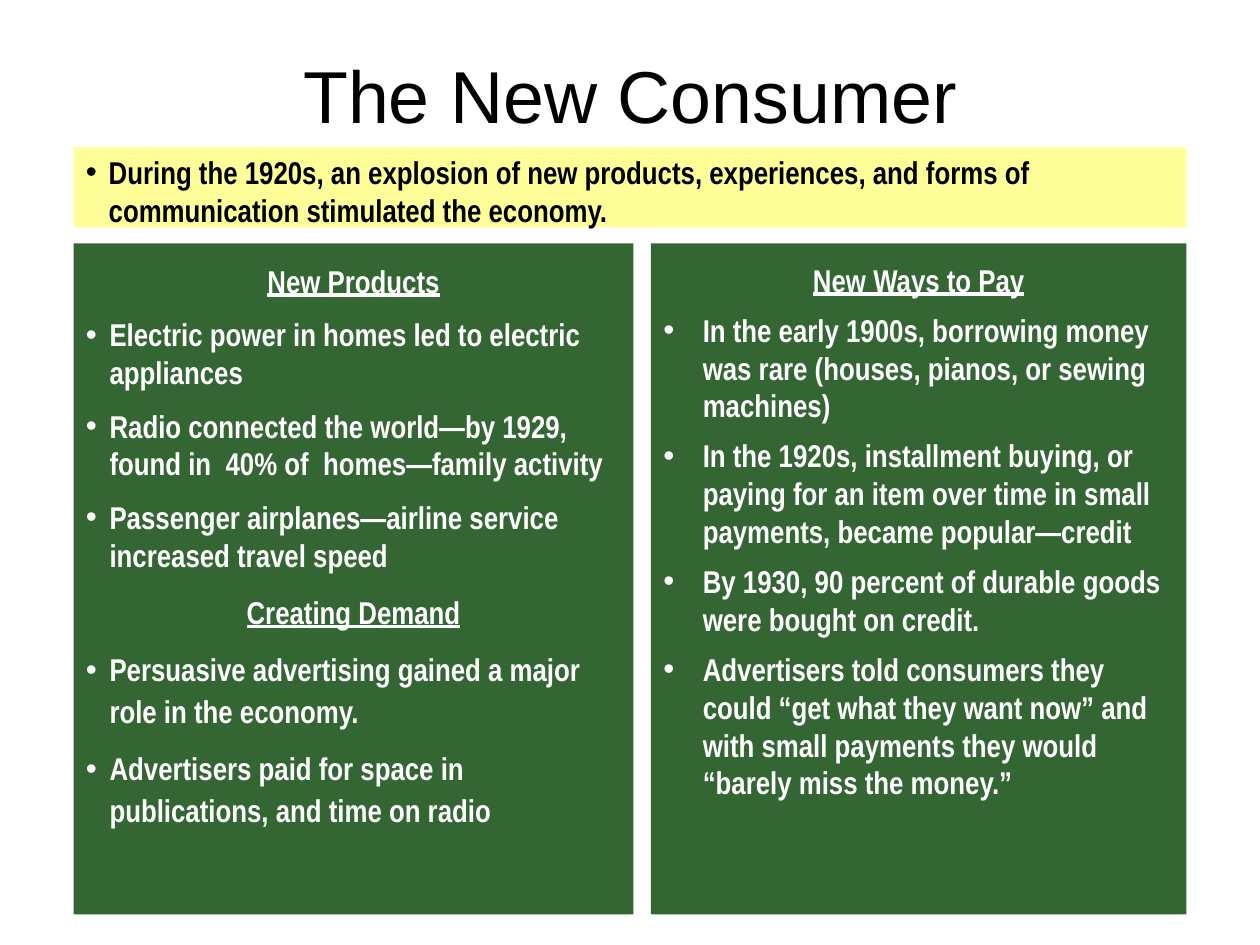
from lxml.etree import SubElement
from pptx import Presentation
from pptx.dml.color import RGBColor
from pptx.enum.shapes import MSO_SHAPE as Shape
from pptx.enum.text import MSO_ANCHOR as Anchor, PP_ALIGN as Align
from pptx.oxml.ns import qn
from pptx.util import Pt

BLACK = RGBColor(0x00, 0x00, 0x00)
WHITE = RGBColor(0xFF, 0xFF, 0xFF)
GREEN = RGBColor(0x33, 0x66, 0x33)
YELLOW = RGBColor(0xFF, 0xFF, 0x99)

TITLE = "The New Consumer"
HEAD, ITEM = "head", "item"

# Each line is kind, text, line spacing
INTRO = [
    (ITEM, "During the 1920s, an explosion of new products, experiences, "
           "and forms of communication stimulated the economy.", 1),
]
PRODUCTS = [
    (HEAD, "New Products", 1),
    (ITEM, "Electric power in homes led to electric appliances", 1),
    (ITEM, "Radio connected the world—by 1929, found in  40% of  homes"
           "—family activity", 1),
    (ITEM, "Passenger airplanes—airline service increased travel speed", 1),
    (HEAD, "Creating Demand", 1.1),
    (ITEM, "Persuasive advertising gained a major role in the economy.", 1.1),
    (ITEM, "Advertisers paid for space in publications, and time on radio",
     1.1),
]
CREDIT = [
    (HEAD, "New Ways to Pay", 1),
    (ITEM, "In the early 1900s, borrowing money was rare (houses, pianos, "
           "or sewing machines)", 1),
    (ITEM, "In the 1920s, installment buying, or paying for an item over "
           "time in small payments, became popular—credit", 1),
    (ITEM, "By 1930, 90 percent of durable goods were bought on credit.", 1),
    (ITEM, "Advertisers told consumers they could “get what they want now” "
           "and with small payments they would “barely miss the money.”", 1),
]

LEFT, WIDTH = 42, 636
TOP, BASE = 139, 522.5
SPLIT = 372  # left edge of the right panel
RIGHT = LEFT + WIDTH

# Panel box, fill, text colour, text inset from top, indent, gap, lines
PANELS = [
    ((SPLIT, TOP, RIGHT - SPLIT, BASE - TOP), GREEN, WHITE,
     6.5, 22.5, 7, CREDIT),
    ((LEFT, 84, WIDTH, 46), YELLOW, BLACK, 0, 13, 7, INTRO),
    ((LEFT, TOP, 320, BASE - TOP), GREEN, WHITE, 7, 13.5, 9, PRODUCTS),
]


def add_text(slide, x, y, w, h):
    frame = slide.shapes.add_textbox(Pt(x), Pt(y), Pt(w), Pt(h)).text_frame
    frame.word_wrap = True
    return frame


def add_bullet(par, indent):
    props = par._p.get_or_add_pPr()
    props.set("marL", str(Pt(indent)))
    props.set("indent", str(-Pt(indent)))
    SubElement(props, qn("a:buFont"), typeface="Arial")
    SubElement(props, qn("a:buChar"), char="•")


def set_font(par, name, size, color):
    par.font.name = name
    par.font.size = Pt(size)
    par.font.color.rgb = color


def add_panel(slide, box, fill, color, inset, indent, gap, lines):
    panel = slide.shapes.add_shape(Shape.RECTANGLE, *map(Pt, box))
    panel.shadow.inherit = False
    panel.fill.solid()
    panel.fill.fore_color.rgb = fill
    panel.line.fill.background()

    x, y, w, h = box
    frame = add_text(slide, x, y + inset, w, h - inset)
    for i, (kind, text, space) in enumerate(lines):
        par = frame.add_paragraph() if i else frame.paragraphs[0]
        par.text = text
        if kind == ITEM:
            add_bullet(par, indent)
        else:
            par.alignment = Align.CENTER
            par.font.underline = True
        par.line_spacing = space
        if i:
            par.space_before = Pt(gap)
        set_font(par, "Arial Narrow", 18, color)
        par.font.bold = True


def main():
    deck = Presentation()
    deck.slide_width, deck.slide_height = Pt(720), Pt(540)
    slide = deck.slides.add_slide(deck.slide_layouts[6])

    frame = add_text(slide, LEFT, 24, WIDTH, 60)
    frame.vertical_anchor = Anchor.MIDDLE
    title = frame.paragraphs[0]
    title.text = TITLE
    title.alignment = Align.CENTER
    set_font(title, "Arial", 42, BLACK)

    for panel in PANELS:
        add_panel(slide, *panel)
    deck.save("out.pptx")


if __name__ == "__main__":
    main()
